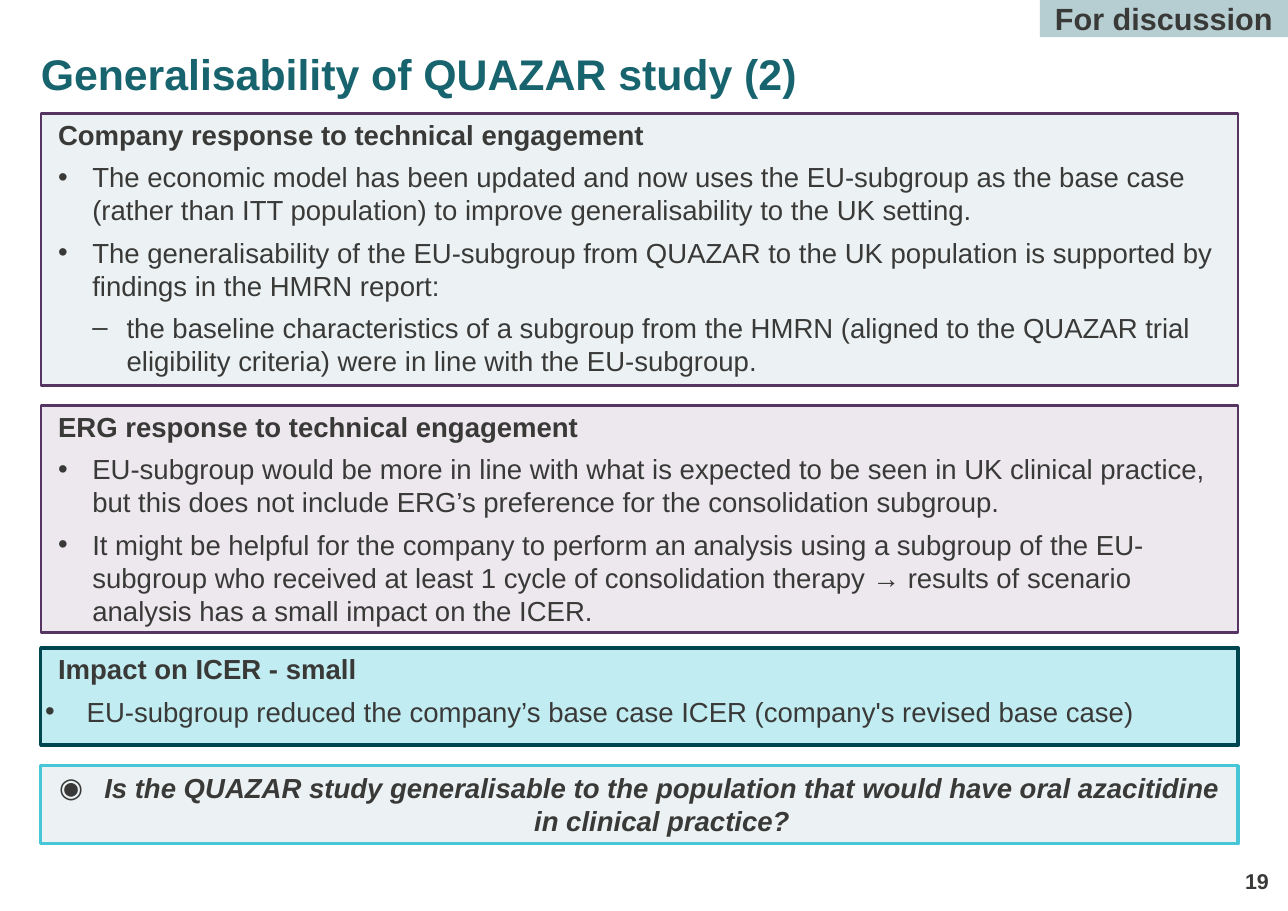
from lxml import etree
from pptx import Presentation
from pptx.dml.color import RGBColor
from pptx.enum.shapes import MSO_SHAPE
from pptx.enum.text import MSO_ANCHOR, PP_ALIGN
from pptx.oxml.ns import qn
from pptx.util import Cm, Pt

RECTANGLE = MSO_SHAPE.RECTANGLE
TOP, MIDDLE, BOTTOM = MSO_ANCHOR.TOP, MSO_ANCHOR.MIDDLE, MSO_ANCHOR.BOTTOM
LEFT, CENTER, RIGHT = PP_ALIGN.LEFT, PP_ALIGN.CENTER, PP_ALIGN.RIGHT

FONT = "Arial"
INK = RGBColor(0x39, 0x39, 0x38)
TEAL = RGBColor(0x18, 0x64, 0x6E)
TAG_FILL = RGBColor(0xB6, 0xCE, 0xD1)
PALE_GREY = RGBColor(0xEC, 0xF2, 0xF3)
PALE_PURPLE = RGBColor(0xEC, 0xE8, 0xEE)
PALE_CYAN = RGBColor(0xC1, 0xEC, 0xF2)
PURPLE = RGBColor(0x57, 0x35, 0x62)
DARK_TEAL = RGBColor(0x00, 0x46, 0x50)
CYAN = RGBColor(0x46, 0xC6, 0xD7)

TITLE = "Generalisability of QUAZAR study (2)"
TAG = "For discussion"
PAGE = "19"

# style: level, left margin (cm), hanging indent (cm), bullet, bold, italic, alignment
STYLES = {
    "heading": (0, 0.3, 0, None, True, False, LEFT),
    "point": (0, 1.09, 0.79, "•", False, False, LEFT),
    "subpoint": (1, 1.88, 0.79, "–", False, False, LEFT),
    "impact": (0, 0.96, 0.96, "•", False, False, LEFT),
    "question": (1, 1.04, 1.04, "◉", True, True, CENTER),
}

# panel: top, height (cm), fill, line colour, line width (pt), side and top insets (cm), text
PANELS = [
    (2.62, 6.27, PALE_GREY, PURPLE, 1.5, (0.1, 0.1), [
        ("heading", "Company response to technical engagement"),
        ("point", "The economic model has been updated and now uses the EU-subgroup as the "
                  "base case (rather than ITT population) to improve generalisability to the "
                  "UK setting."),
        ("point", "The generalisability of the EU-subgroup from QUAZAR to the UK population "
                  "is supported by findings in the HMRN report:"),
        ("subpoint", "the baseline characteristics of a subgroup from the HMRN (aligned to "
                     "the QUAZAR trial eligibility criteria) were in line with the "
                     "EU-subgroup."),
    ]),
    (9.35, 5.23, PALE_PURPLE, PURPLE, 1.5, (0.1, 0.1), [
        ("heading", "ERG response to technical engagement"),
        ("point", "EU-subgroup would be more in line with what is expected to be seen in UK "
                  "clinical practice, but this does not include ERG’s preference for the "
                  "consolidation subgroup."),
        ("point", "It might be helpful for the company to perform an analysis using a "
                  "subgroup of the EU-subgroup who received at least 1 cycle of "
                  "consolidation therapy → results of scenario analysis has a small impact "
                  "on the ICER."),
    ]),
    (14.94, 2.24, PALE_CYAN, DARK_TEAL, 2.25, (0.1, 0.1), [
        ("heading", "Impact on ICER - small"),
        ("impact", "EU-subgroup reduced the company’s base case ICER (company's revised "
                   "base case)"),
    ]),
    (17.65, 1.8, PALE_GREY, CYAN, 2.25, (0.25, 0.13), [
        ("question", "Is the QUAZAR study generalisable to the population that would have "
                     "oral azacitidine in clinical practice?"),
    ]),
]

SLIDE_WIDTH, SLIDE_HEIGHT = 29.7, 21
PANEL_LEFT, PANEL_WIDTH = 0.94, 27.61
TAG_WIDTH = 5.72


def set_frame(frame, anchor, side=0, top=0):
    frame.word_wrap = True
    frame.vertical_anchor = anchor
    frame.margin_left = frame.margin_right = Cm(side)
    frame.margin_top = frame.margin_bottom = Cm(top)


def set_font(paragraph, size, color=INK, bold=True, italic=False):
    font = paragraph.font
    font.name, font.size, font.bold, font.italic = FONT, Pt(size), bold, italic
    font.color.rgb = color


def set_line(frame, text, size, align, color=INK):
    paragraph = frame.paragraphs[0]
    paragraph.text = text
    paragraph.alignment = align
    set_font(paragraph, size, color)
    return paragraph


def add_box(slide, left, top, width, height, fill):
    box = slide.shapes.add_shape(RECTANGLE, Cm(left), Cm(top), Cm(width), Cm(height))
    box.shadow.inherit = False
    box.fill.solid()
    box.fill.fore_color.rgb = fill
    return box


def write_paragraph(paragraph, style, text):
    level, margin, hanging, bullet, bold, italic, align = STYLES[style]
    paragraph.text = text
    paragraph.level = level
    paragraph.alignment = align
    paragraph.space_after = Pt(6)
    properties = paragraph._p.get_or_add_pPr()
    properties.set("marL", str(Cm(margin)))
    properties.set("indent", str(-Cm(hanging)))
    if bullet:
        etree.SubElement(properties, qn("a:buFont")).set("typeface", FONT)
        etree.SubElement(properties, qn("a:buChar")).set("char", bullet)
    set_font(paragraph, 18, bold=bold, italic=italic)


def add_panel(slide, top, height, fill, line, line_width, insets, content):
    panel = add_box(slide, PANEL_LEFT, top, PANEL_WIDTH, height, fill)
    panel.line.color.rgb = line
    panel.line.width = Pt(line_width)
    frame = panel.text_frame
    set_frame(frame, TOP, *insets)
    for index, (style, text) in enumerate(content):
        paragraph = frame.add_paragraph() if index else frame.paragraphs[0]
        write_paragraph(paragraph, style, text)


def main():
    deck = Presentation()
    deck.slide_width, deck.slide_height = Cm(SLIDE_WIDTH), Cm(SLIDE_HEIGHT)
    slide = deck.slides.add_slide(deck.slide_layouts[5])

    title = slide.shapes.title
    title.left, title.top = Cm(PANEL_LEFT), Cm(0.81)
    title.width, title.height = Cm(26.85), Cm(2.13)
    set_frame(title.text_frame, TOP)
    set_line(title.text_frame, TITLE, 28, LEFT, TEAL).line_spacing = Pt(42)

    for panel in PANELS:
        add_panel(slide, *panel)

    tag = add_box(slide, SLIDE_WIDTH - TAG_WIDTH, 0, TAG_WIDTH, 0.86, TAG_FILL)
    tag.line.fill.background()
    set_frame(tag.text_frame, MIDDLE)
    set_line(tag.text_frame, TAG, 20, CENTER)

    page = slide.shapes.add_textbox(Cm(27.86), Cm(19.69), Cm(1.4), Cm(0.91))
    set_frame(page.text_frame, BOTTOM)
    set_line(page.text_frame, PAGE, 14, RIGHT)

    deck.save("out.pptx")


if __name__ == "__main__":
    main()
